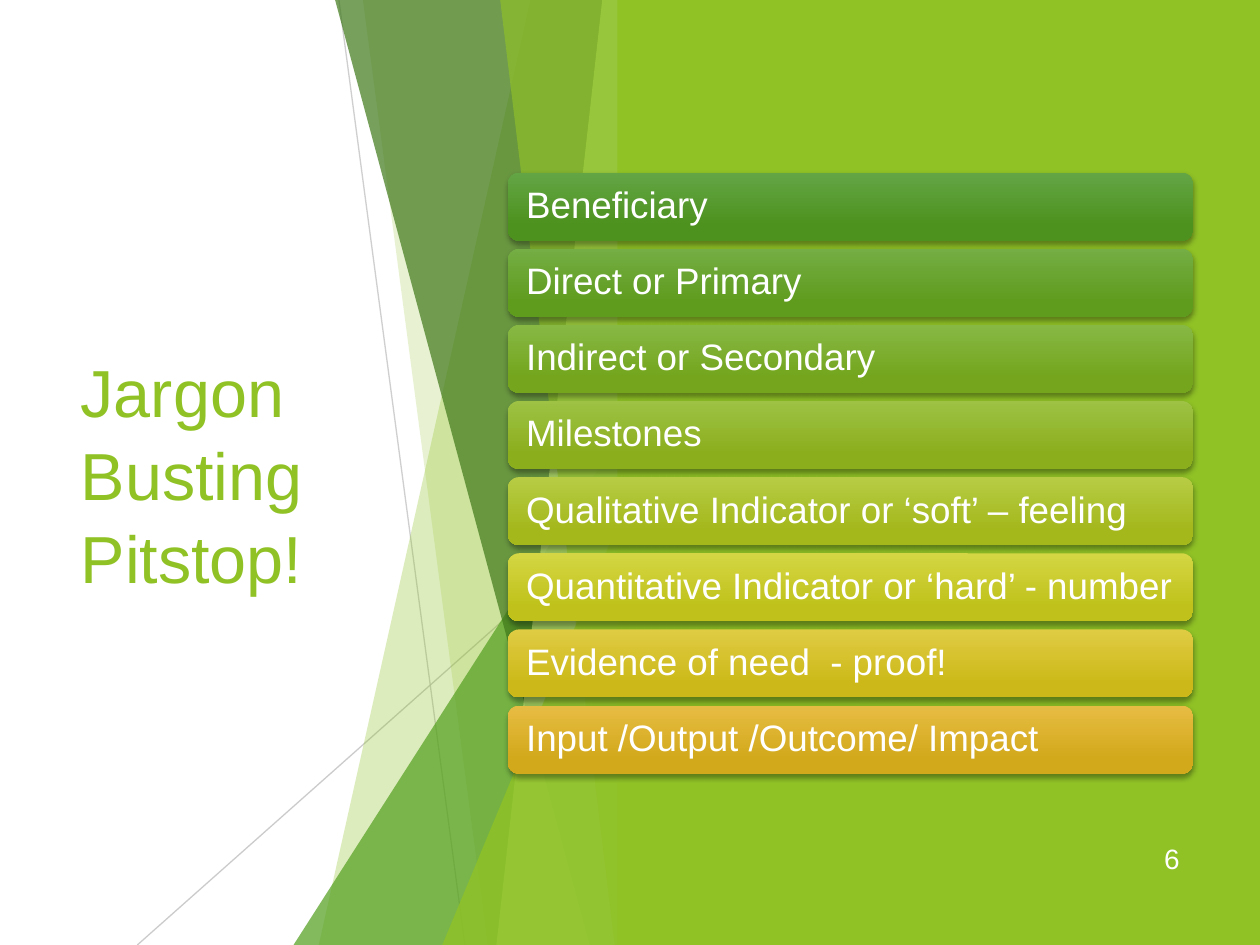
from lxml.etree import SubElement
from pptx import Presentation
from pptx.dml.color import RGBColor
from pptx.enum.shapes import MSO_CONNECTOR, MSO_SHAPE
from pptx.enum.text import MSO_ANCHOR, MSO_AUTO_SIZE, PP_ALIGN
from pptx.oxml.ns import qn
from pptx.util import Inches, Pt

FONT = "Arial"
WHITE = RGBColor(0xFF, 0xFF, 0xFF)
GREY = RGBColor(0xBF, 0xBF, 0xBF)
LIME = RGBColor(0x90, 0xC2, 0x26)
GREEN = RGBColor(0x54, 0xA0, 0x21)
DARK_GREEN = RGBColor(0x3F, 0x78, 0x19)
PALE_LIME = RGBColor(0xC0, 0xE4, 0x74)

# Term, top colour and lower colour of each bar
TERMS = [
    ("Beneficiary", RGBColor(0x63, 0xA5, 0x45), RGBColor(0x4D, 0x92, 0x1E)),
    ("Direct or Primary", RGBColor(0x74, 0xAE, 0x44), RGBColor(0x5F, 0x9C, 0x1E)),
    ("Indirect or Secondary", RGBColor(0x87, 0xB8, 0x44), RGBColor(0x74, 0xA5, 0x1D)),
    ("Milestones", RGBColor(0x9D, 0xC2, 0x44), RGBColor(0x8B, 0xAE, 0x1D)),
    ("Qualitative Indicator or ‘soft’ – feeling",
     RGBColor(0xB7, 0xCC, 0x44), RGBColor(0xA4, 0xB8, 0x1C)),
    ("Quantitative Indicator or ‘hard’ - number",
     RGBColor(0xD4, 0xD6, 0x43), RGBColor(0xC0, 0xC2, 0x1B)),
    ("Evidence of need  - proof!", RGBColor(0xE0, 0xCC, 0x43), RGBColor(0xCC, 0xB9, 0x19)),
    ("Input /Output /Outcome/ Impact", RGBColor(0xE7, 0xBC, 0x43), RGBColor(0xD2, 0xA9, 0x1B)),
]


def set_opacity(shape, percent):
    color = shape.element.spPr.find(".//" + qn("a:srgbClr"))
    SubElement(color, qn("a:alpha"), val=str(percent * 1000))


def paint(shape, color, opacity=100):
    shape.shadow.inherit = False
    shape.fill.solid()
    shape.fill.fore_color.rgb = color
    shape.line.fill.background()
    if opacity < 100:
        set_opacity(shape, opacity)


def write(paragraph, text, size, color):
    paragraph.alignment = PP_ALIGN.LEFT
    run = paragraph.add_run()
    run.text = text
    run.font.name = FONT
    run.font.size = Pt(size)
    run.font.color.rgb = color


def add_title(slide, left, top, width, height):
    title = slide.shapes.title
    title.left, title.top, title.width, title.height = left, top, width, height
    frame = title.text_frame
    frame.word_wrap = True
    frame.auto_size = MSO_AUTO_SIZE.NONE
    frame.vertical_anchor = MSO_ANCHOR.MIDDLE
    paragraph = frame.paragraphs[0]
    paragraph.line_spacing = 1.04
    write(paragraph, "Jargon Busting Pitstop!", 38, LIME)


def add_thin_line(slide, start, end, opacity):
    line = slide.shapes.add_connector(MSO_CONNECTOR.STRAIGHT, *start, *end)
    line.line.color.rgb = GREY
    line.line.width = Pt(0.75)
    set_opacity(line, opacity)
    SubElement(line.element.spPr, qn("a:effectLst"))


def add_facet(slide, top_left, bottom_left, right, top, bottom, color, opacity):
    """Four-sided facet with a slanted left edge and a straight right edge."""
    builder = slide.shapes.build_freeform(top_left, top, scale=1.0)
    builder.add_line_segments([(right, top), (right, bottom), (bottom_left, bottom)])
    paint(builder.convert_to_shape(), color, opacity)


def add_corner(slide, left, top, right, bottom, color, opacity):
    """Triangle with its apex above the right-hand end of its base."""
    corner = slide.shapes.add_shape(
        MSO_SHAPE.ISOSCELES_TRIANGLE, left, top, right - left, bottom - top)
    corner.adjustments[0] = 1
    paint(corner, color, opacity)


def add_facets(slide, right, top, bottom):
    add_thin_line(slide, (Inches(2.69), top), (Inches(3.69), bottom), 75)
    add_thin_line(slide, (right, Inches(4.03)), (Inches(1.09), bottom), 80)
    edges = (right, top, bottom)
    add_facet(slide, Inches(4.21), Inches(2.53), *edges, LIME, 30)
    add_facet(slide, Inches(2.88), Inches(3.87), *edges, LIME, 20)
    add_corner(slide, Inches(2.33), Inches(3.33), right, bottom, GREEN, 72)
    add_facet(slide, Inches(2.66), Inches(4.68), *edges, DARK_GREEN, 70)
    add_facet(slide, Inches(4.78), Inches(3.94), *edges, PALE_LIME, 70)
    add_facet(slide, Inches(3.97), Inches(4.88), *edges, LIME, 65)
    add_corner(slide, Inches(3.51), Inches(3.93), right, bottom, LIME, 80)


def add_panel(slide, left, top, width, height):
    paint(slide.shapes.add_shape(MSO_SHAPE.RECTANGLE, left, top, width, height), LIME)


def add_slide_number(slide, left, top, width, height):
    box = slide.shapes.add_textbox(left, top, width, height)
    frame = box.text_frame
    frame.word_wrap = True
    frame.vertical_anchor = MSO_ANCHOR.MIDDLE
    paragraph = frame.paragraphs[0]
    paragraph.space_after = Pt(6)
    write(paragraph, "6", 16, WHITE)


def add_bar(slide, left, top, width, height, term, upper, lower):
    bar = slide.shapes.add_shape(MSO_SHAPE.ROUNDED_RECTANGLE, left, top, width, height)
    bar.line.fill.background()

    # Gradient from top to bottom
    bar.fill.gradient()
    bar.fill.gradient_angle = 270
    for stop, position, color in zip(bar.fill.gradient_stops, (0, 0.78), (upper, lower)):
        stop.position = position
        stop.color.rgb = color

    # Soft shadow below
    bar.shadow.inherit = False
    effects = bar.element.spPr.find(qn("a:effectLst"))
    shadow = SubElement(effects, qn("a:outerShdw"), blurRad=str(Pt(3)),
                        dist=str(Pt(2)), dir="5400000", rotWithShape="0")
    shadow_color = SubElement(shadow, qn("a:srgbClr"), val="000000")
    SubElement(shadow_color, qn("a:alpha"), val="35000")

    # Term
    frame = bar.text_frame
    frame.word_wrap = True
    frame.vertical_anchor = MSO_ANCHOR.MIDDLE
    frame.margin_left = frame.margin_right = Inches(0.12)
    paragraph = frame.paragraphs[0]
    paragraph.line_spacing = 0.9
    write(paragraph, term, 21, WHITE)


def add_term_list(slide, left, top, width, height):
    bar_height = Inches(0.54)
    step = (height - bar_height) / (len(TERMS) - 1)
    for index, term in enumerate(TERMS):
        add_bar(slide, left, round(top + index * step), width, bar_height, *term)


def main():
    presentation = Presentation()
    presentation.slide_width = Inches(10)
    presentation.slide_height = Inches(7.5)
    slide = presentation.slides.add_slide(presentation.slide_layouts[5])

    add_title(slide, Inches(0.54), Inches(1.51), Inches(2.91), Inches(4.48))
    add_facets(slide, Inches(5), Inches(0), Inches(7.5))
    add_panel(slide, Inches(4.9), Inches(0), Inches(5.1), Inches(7.5))
    add_slide_number(slide, Inches(9.14), Inches(6.61), Inches(0.56), Inches(0.4))
    add_term_list(slide, Inches(4.03), Inches(1.37), Inches(5.44), Inches(4.77))

    presentation.save("out.pptx")


if __name__ == "__main__":
    main()
